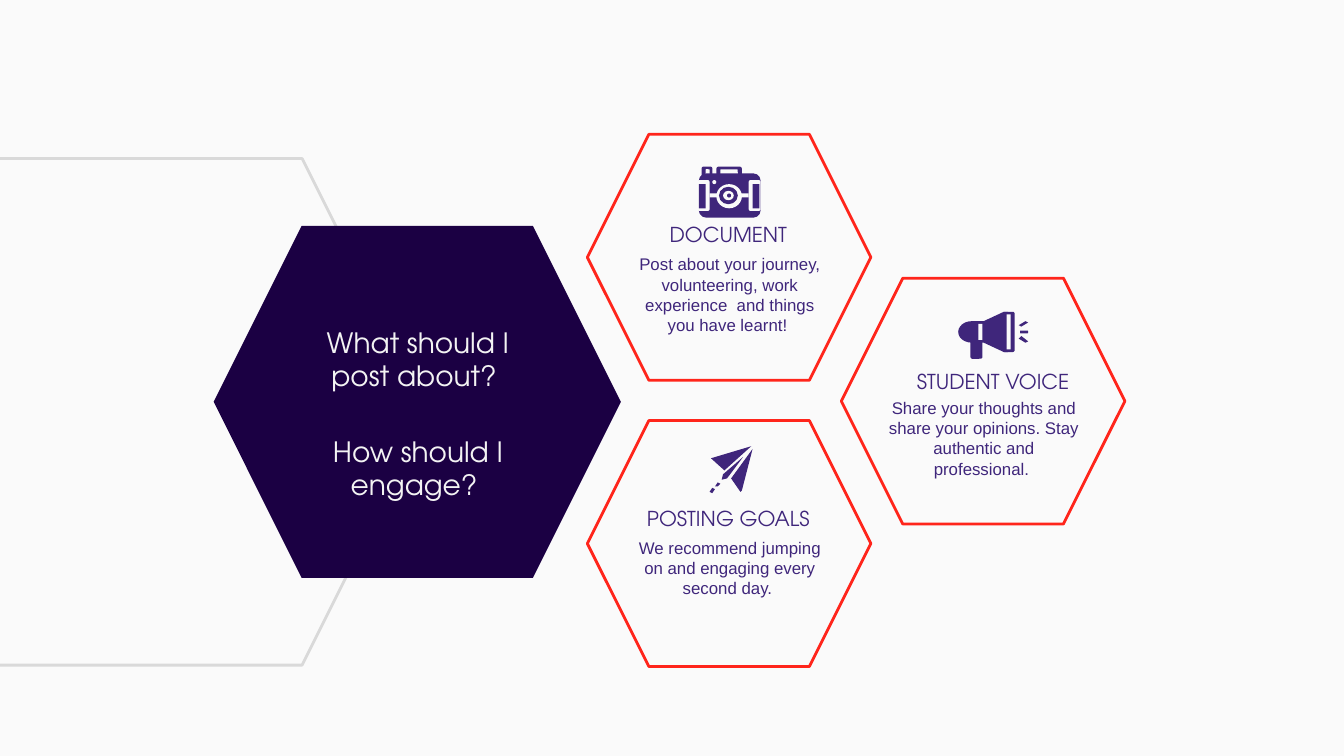
from dataclasses import dataclass

from pptx import Presentation
from pptx.dml.color import RGBColor
from pptx.enum.shapes import MSO_SHAPE
from pptx.enum.text import MSO_ANCHOR, PP_ALIGN
from pptx.util import Inches, Pt

HEXAGON = MSO_SHAPE.HEXAGON
ROUND = MSO_SHAPE.ROUNDED_RECTANGLE
RECT = MSO_SHAPE.RECTANGLE
OVAL = MSO_SHAPE.OVAL
CENTER = PP_ALIGN.CENTER
TOP = MSO_ANCHOR.TOP

PAPER, NAVY, PURPLE = "FAFAFA", "1B0043", "3F267B"
RED, GREY, LIGHT = "FF251B", "D9D9D9", "F3F3F3"
HEADING_FONT, BODY_FONT = "TeX Gyre Adventor", "Arial"
CARD_W, CARD_H = 2.11, 1.83
TITLE_W, BODY_W = 1.7, 1.64


@dataclass
class Card:
    """A hexagon; the text offsets are measured from its top left."""
    x: float
    y: float
    title: str
    body: str
    title_dy: float
    body_dy: float
    title_dx: float = 0.2


@dataclass
class Part:
    """One preset shape of an icon."""
    kind: int
    x: float
    y: float
    w: float
    h: float
    fill: str = PURPLE


@dataclass
class Polygon:
    """One straight-edged piece of an icon."""
    points: list[tuple[float, float]]


CARDS = [
    Card(4.37, 1, "DOCUMENT", "Post about your journey, volunteering, work "
         "experience  and things you have learnt! ", 0.56, 0.79),
    Card(4.37, 3.13, "POSTING GOALS",
         "We recommend jumping on and engaging every second day. ", 0.54, 0.77),
    Card(6.26, 2.07, "STUDENT VOICE", "Share your thoughts and share your "
         "opinions. Stay authentic and professional. ", 0.58, 0.79, 0.28),
]

CAMERA = [
    # Knob and handle
    Part(ROUND, 5.22, 1.24, 0.08, 0.1), Part(ROUND, 5.25, 1.26, 0.03, 0.04, PAPER),
    Part(ROUND, 5.33, 1.24, 0.19, 0.1), Part(ROUND, 5.36, 1.26, 0.13, 0.04, PAPER),
    # Body with side grips
    Part(ROUND, 5.2, 1.29, 0.46, 0.33),
    Part(ROUND, 5.19, 1.34, 0.09, 0.23, PAPER), Part(RECT, 5.2, 1.37, 0.05, 0.18),
    Part(ROUND, 5.57, 1.34, 0.09, 0.23, PAPER), Part(RECT, 5.6, 1.37, 0.05, 0.18),
    # Lens and flash
    Part(RECT, 5.28, 1.44, 0.29, 0.03, PAPER),
    Part(OVAL, 5.33, 1.37, 0.19, 0.18, PAPER), Part(OVAL, 5.35, 1.39, 0.14, 0.13),
    Part(OVAL, 5.38, 1.42, 0.08, 0.07, PAPER), Part(OVAL, 5.41, 1.44, 0.03, 0.03),
    Part(OVAL, 5.3, 1.34, 0.03, 0.03, PAPER),
]

PLANE = [
    Polygon([(5.59, 3.32), (5.29, 3.41), (5.39, 3.5)]),
    Polygon([(5.6, 3.34), (5.44, 3.56), (5.51, 3.66), (5.52, 3.65)]),
    Polygon([(5.53, 3.4), (5.38, 3.53), (5.37, 3.57), (5.41, 3.56)]),
    Polygon([(5.34, 3.59), (5.36, 3.6), (5.34, 3.62), (5.32, 3.62)]),
    Polygon([(5.3, 3.63), (5.32, 3.64), (5.3, 3.67), (5.28, 3.66)]),
]

MEGAPHONE = [
    Part(OVAL, 7.13, 2.39, 0.2, 0.16),
    Part(ROUND, 7.22, 2.47, 0.09, 0.2),
    Polygon([(7.23, 2.39), (7.32, 2.39), (7.47, 2.32), (7.5, 2.32),
             (7.5, 2.62), (7.47, 2.62), (7.32, 2.55), (7.23, 2.55)]),
    Part(ROUND, 7.46, 2.32, 0.09, 0.3),
    Part(RECT, 7.49, 2.34, 0.03, 0.26, PAPER),
    Part(RECT, 7.28, 2.41, 0.03, 0.12, PAPER),
    # Sound rays
    Polygon([(7.63, 2.39), (7.65, 2.4), (7.6, 2.43), (7.58, 2.42)]),
    Part(ROUND, 7.59, 2.46, 0.06, 0.02),
    Polygon([(7.6, 2.5), (7.65, 2.54), (7.63, 2.55), (7.58, 2.52)]),
]


def rgb(color: str) -> RGBColor:
    return RGBColor.from_string(color)


def paint(sp, fill: str | None, line: str | None = None) -> None:
    sp.shadow.inherit = False
    if fill:
        sp.fill.solid()
        sp.fill.fore_color.rgb = rgb(fill)
    else:
        sp.fill.background()
    if line:
        sp.line.color.rgb = rgb(line)
        sp.line.width = Pt(1.5)
    else:
        sp.line.fill.background()


def add_preset(s, kind: int, x: float, y: float, w: float, h: float,
               fill: str | None, line: str | None = None) -> None:
    sp = s.shapes.add_shape(kind, Inches(x), Inches(y), Inches(w), Inches(h))
    paint(sp, fill, line)


def add_text(s, text: str, x: float, y: float, w: float, h: float,
             size: float, font: str, color: str) -> None:
    sp = s.shapes.add_textbox(Inches(x), Inches(y), Inches(w), Inches(h))
    tf = sp.text_frame
    tf.word_wrap = True
    tf.vertical_anchor = TOP
    tf.margin_left = tf.margin_right = Inches(0.1)
    tf.margin_top = tf.margin_bottom = Inches(0.1)
    p = tf.paragraphs[0]
    p.text = text
    p.alignment = CENTER
    p.font.size = Pt(size)
    p.font.name = font
    p.font.color.rgb = rgb(color)


def add_card(s, card: Card) -> None:
    add_preset(s, HEXAGON, card.x, card.y, CARD_W, CARD_H, PAPER, RED)
    add_text(s, card.title, card.x + card.title_dx, card.y + card.title_dy,
             TITLE_W, 0.36, 11, HEADING_FONT, PURPLE)
    add_text(s, card.body, card.x + 0.24, card.y + card.body_dy,
             BODY_W, 1.06, 9, BODY_FONT, PURPLE)


def add_icon(s, icon: list[Part | Polygon]) -> None:
    for part in icon:
        if isinstance(part, Part):
            add_preset(s, part.kind, part.x, part.y, part.w, part.h, part.fill)
        else:
            points = [(Inches(x), Inches(y)) for x, y in part.points]
            builder = s.shapes.build_freeform(*points[0])
            builder.add_line_segments(points[1:], close=True)
            paint(builder.convert_to_shape(), PURPLE)


def main() -> None:
    prs = Presentation()
    prs.slide_width = Inches(10)
    prs.slide_height = prs.slide_width * 9 // 16
    s = prs.slides.add_slide(prs.slide_layouts[6])
    s.background.fill.solid()
    s.background.fill.fore_color.rgb = rgb(PAPER)

    # Large hexagons with the two questions
    add_preset(s, HEXAGON, -1.16, 1.18, 4.35, 3.77, None, GREY)
    add_preset(s, HEXAGON, 1.59, 1.68, 3.03, 2.62, NAVY)
    for question, y in (("What should I post about? ", 2.32),
                        ("How should I engage? ", 3.13)):
        add_text(s, question, 2.3, y, 1.62, 0.51, 15, HEADING_FONT, LIGHT)

    # Answer cards and their icons
    for card, icon in zip(CARDS, (CAMERA, PLANE, MEGAPHONE)):
        add_card(s, card)
        add_icon(s, icon)

    prs.save("out.pptx")


if __name__ == "__main__":
    main()
